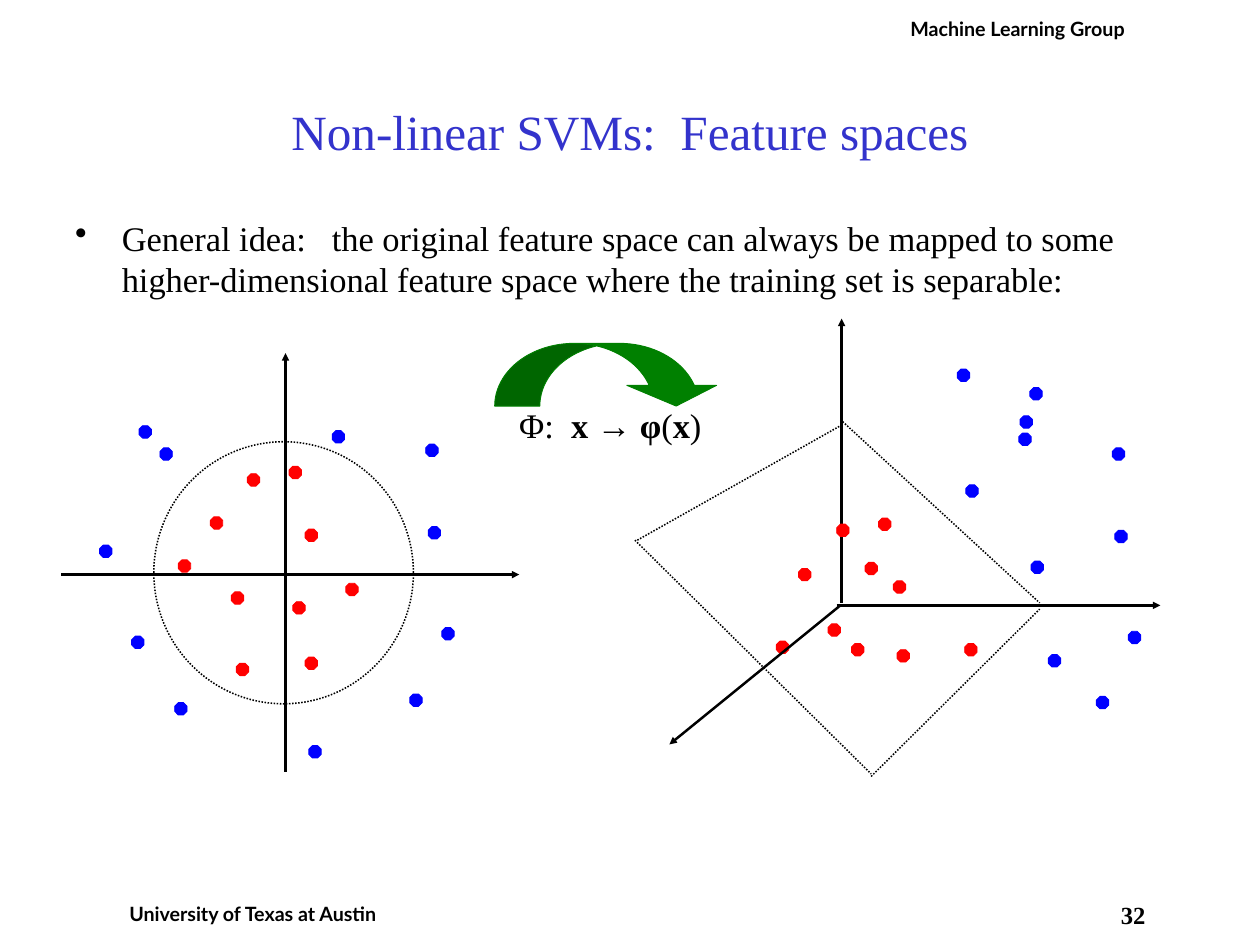
"""Build a slide on mapping data into a higher-dimensional feature space."""
from lxml.etree import SubElement
from pptx import Presentation
from pptx.dml.color import RGBColor
from pptx.enum.dml import MSO_LINE
from pptx.enum.shapes import MSO_CONNECTOR, MSO_SHAPE
from pptx.enum.text import MSO_ANCHOR, MSO_AUTO_SIZE, PP_ALIGN
from pptx.oxml.ns import qn
from pptx.util import Pt

COLORS = {"black": "000000", "title": "3333CC", "red": "FF0000",
          "blue": "0000FF", "green": "008000"}
SERIF, SANS = "Times New Roman", "Lato"
DOT_SIZE = 10

PLANAR_DOTS = {
    "red": [(235, 379), (171, 420), (188, 481), (248, 534), (201, 385),
            (145, 455), (192, 539), (248, 430), (281, 474), (238, 489)],
    "blue": [(348, 428), (333, 564), (81, 443), (251, 606), (359, 510),
             (142, 571), (107, 517), (113, 346), (270, 350), (130, 364),
             (346, 361)],
}
SPATIAL_DOTS = {
    "red": [(714, 421), (649, 462), (692, 523), (784, 523), (680, 426),
            (703, 457), (729, 528), (726, 472), (673, 507), (631, 521)],
    "blue": [(906, 431), (891, 566), (837, 315), (838, 456), (917, 513),
             (785, 394), (852, 532), (829, 338), (828, 352), (778, 300),
             (904, 364)],
}
PLANAR_AXES = [(232, 627, 232, 287), (50, 467, 422, 467)]
SPATIAL_AXES = [(684, 490, 684, 259), (680, 492, 943, 492)]
DEPTH_AXIS = (683, 492, 544, 605)
PLANE_EDGES = [(683, 341, 845, 490), (708, 631, 845, 495),
               (518, 439, 683, 346), (516, 439, 708, 629)]


def color(name):
    return RGBColor.from_string(COLORS[name])


def fill_text(s, runs, size, font=SERIF, ink="black", align=PP_ALIGN.CENTER,
              margins=(10, 5)):
    """Write (text, bold) runs as one paragraph and return the paragraph."""
    tf = s.text_frame
    tf.word_wrap = True
    tf.auto_size = MSO_AUTO_SIZE.NONE
    tf.margin_left = tf.margin_right = Pt(margins[0])
    tf.margin_top = tf.margin_bottom = Pt(margins[1])
    p = tf.paragraphs[0]
    p.alignment = align
    for text, bold in runs:
        r = p.add_run()
        r.text = text
        r.font.name, r.font.size, r.font.bold = font, Pt(size), bold
        r.font.color.rgb = color(ink)
    return p


def add_text(slide, box, runs, size, **style):
    s = slide.shapes.add_textbox(*map(Pt, box))
    return fill_text(s, runs, size, **style)


def add_bullet(p, indent):
    pPr = p._p.get_or_add_pPr()
    pPr.set("marL", str(Pt(indent)))
    pPr.set("indent", str(-Pt(indent)))
    SubElement(pPr, qn("a:buChar")).set("char", "•")


def add_line(slide, ends, width, dotted=False):
    """Draw a dotted edge, or a solid axis with an arrowhead at its end."""
    s = slide.shapes.add_connector(MSO_CONNECTOR.STRAIGHT, *map(Pt, ends))
    s.line.color.rgb = color("black")
    s.line.width = Pt(width)
    if dotted:
        s.line.dash_style = MSO_LINE.ROUND_DOT
    else:
        ln = s.line._get_or_add_ln()
        SubElement(ln, qn("a:tailEnd")).set("type", "triangle")
    SubElement(s._element.spPr, qn("a:effectLst"))


def add_solid(slide, kind, box, name):
    s = slide.shapes.add_shape(kind, *map(Pt, box))
    s.shadow.inherit = False
    s.fill.solid()
    s.fill.fore_color.rgb = s.line.color.rgb = color(name)
    s.line.width = Pt(0.75)
    return s


def add_dots(slide, dots):
    for name, places in dots.items():
        for x, y in places:
            add_solid(slide, MSO_SHAPE.OCTAGON, (x, y, DOT_SIZE, DOT_SIZE), name)


def add_boundary(slide, box):
    s = slide.shapes.add_shape(MSO_SHAPE.OVAL, *map(Pt, box))
    s.shadow.inherit = False
    s.fill.background()
    s.line.color.rgb = color("black")
    s.line.width = Pt(1.25)
    s.line.dash_style = MSO_LINE.ROUND_DOT


def add_title(slide, box, text):
    s = slide.shapes.title
    s.left, s.top, s.width, s.height = map(Pt, box)
    s.text_frame.vertical_anchor = MSO_ANCHOR.MIDDLE
    fill_text(s, [(text, False)], 40, ink="title")


def main():
    prs = Presentation()
    prs.slide_width, prs.slide_height = Pt(1024), Pt(768)
    slide = prs.slides.add_slide(prs.slide_layouts[5])

    add_text(slide, (904, 731, 34, 38), [("32", True)], 20, margins=(0, 0))
    add_text(slide, (86, 728, 239, 40), [("University of Texas at Austin", True)],
             16, font=SANS, margins=(5, 5))
    add_text(slide, (725, 9, 204, 49), [("Machine Learning Group", True)],
             16, font=SANS, margins=(5, 5))
    add_title(slide, (77, 42, 870, 128), "Non-linear SVMs:  Feature spaces")
    idea = ("General idea:   the original feature space can always be mapped to "
            "some higher-dimensional feature space where the training set is "
            "separable:")
    p = add_text(slide, (51, 171, 922, 90), [(idea, False)], 28,
                 align=PP_ALIGN.LEFT)
    add_bullet(p, 38)

    for axis in PLANAR_AXES:
        add_line(slide, axis, 2)
    add_dots(slide, PLANAR_DOTS)
    add_boundary(slide, (125, 359, 211, 213))

    for axis in SPATIAL_AXES:
        add_line(slide, axis, 2)
    add_dots(slide, SPATIAL_DOTS)
    add_line(slide, DEPTH_AXIS, 2)
    for edge in PLANE_EDGES:
        add_line(slide, edge, 1.25, dotted=True)

    arrow = add_solid(slide, MSO_SHAPE.CURVED_DOWN_ARROW, (402, 279, 184, 51),
                      "green")
    for i, value in enumerate((0.72, 1.43, 0.33)):
        arrow.adjustments[i] = value
    add_text(slide, (402, 323, 188, 45),
             [("Φ:  ", False), ("x → φ", True), ("(", False), ("x", True),
              (")", False)], 28)

    prs.save("out.pptx")


if __name__ == "__main__":
    main()
